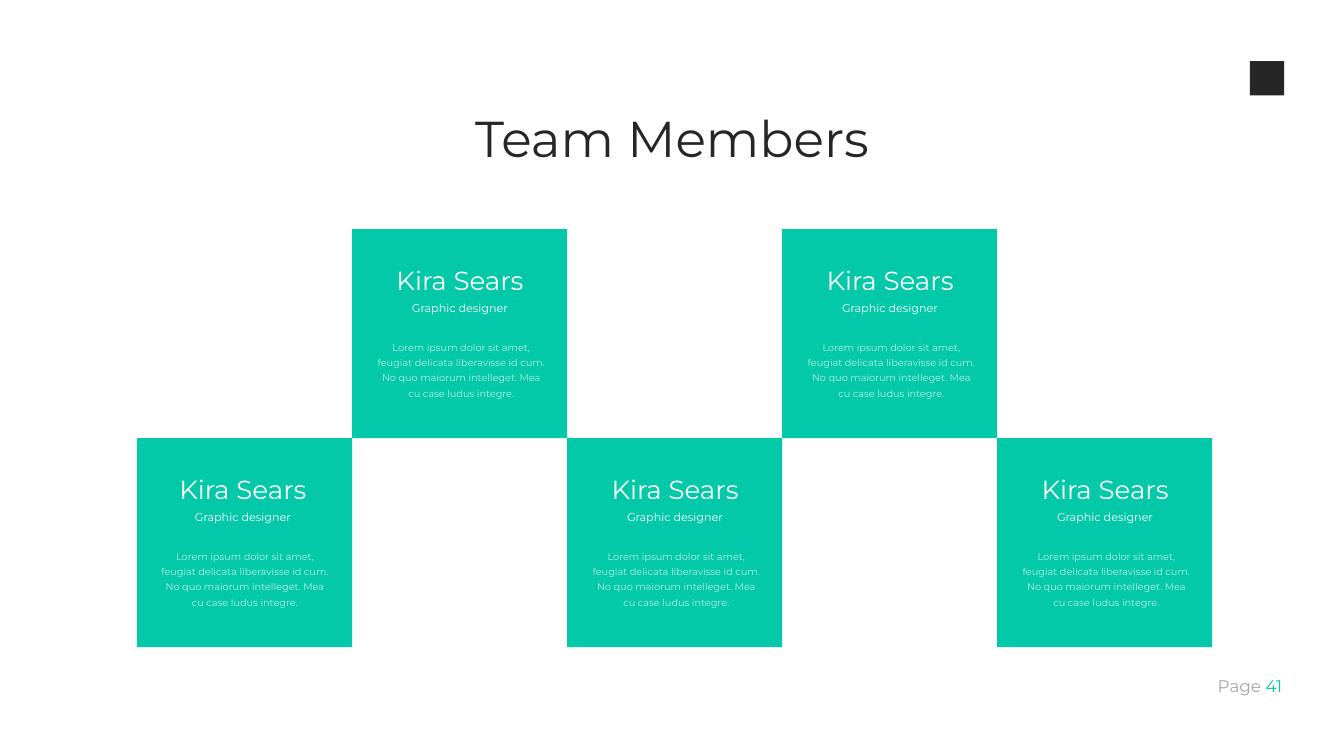
from lxml.etree import SubElement
from pptx import Presentation
from pptx.dml.color import RGBColor
from pptx.enum.shapes import MSO_SHAPE as Shape
from pptx.enum.text import MSO_AUTO_SIZE as AutoSize, PP_ALIGN as Align
from pptx.oxml.ns import qn
from pptx.util import Pt

PX = 9144
THEME = {
    "font": "Montserrat",
    "teal": "03C9A9", "dark": "262626", "gray": "A6A6A6", "white": "FFFFFF",
    "title": 54, "name": 28, "page": 18, "role": 12, "body": 10.5,
}
BIO = ("Lorem ipsum dolor sit amet, feugiat delicata liberavisse id cum. "
       "No quo maiorum intelleget. Mea cu case ludus integre.")

presentation = Presentation()
presentation.slide_width = 2000 * PX
presentation.slide_height = 1125 * PX
slide = presentation.slides.add_slide(presentation.slide_layouts[6])


def add_rectangle(left, top, width, height, color):
    shape = slide.shapes.add_shape(
        Shape.RECTANGLE, left * PX, top * PX, width * PX, height * PX)
    shape.shadow.inherit = False
    shape.fill.solid()
    shape.fill.fore_color.rgb = RGBColor.from_string(THEME[color])
    shape.line.fill.background()


def add_text(left, top, width, height, paragraphs, align=Align.CENTER):
    frame = slide.shapes.add_textbox(
        left * PX, top * PX, width * PX, height * PX).text_frame
    frame.word_wrap = True
    frame.auto_size = AutoSize.SHAPE_TO_FIT_TEXT
    for index, (before, spacing, runs) in enumerate(paragraphs):
        paragraph = frame.add_paragraph() if index else frame.paragraphs[0]
        paragraph.alignment = align
        paragraph.space_before = Pt(before)
        paragraph.line_spacing = spacing
        for text, size, color, opacity in runs:
            run = paragraph.add_run()
            run.text = text
            run.font.name = THEME["font"]
            run.font.size = Pt(THEME[size])
            run.font.color.rgb = RGBColor.from_string(THEME[color])
            if opacity < 100:
                color_element = run.font.fill._xPr.find(".//" + qn("a:srgbClr"))
                SubElement(color_element, qn("a:alpha"), val=str(opacity * 1000))


add_text(1742, 1001, 176, 40, [
    (0, 1.0, [("Page ", "page", "gray", 100), ("41", "page", "teal", 100)]),
], Align.RIGHT)
add_rectangle(1860, 91, 51, 51, "dark")
add_text(525, 154, 950, 101, [
    (6, 1.0, [("Team Members", "title", "dark", 100)]),
])

CARD_WIDTH, CARD_HEIGHT = 320, 311
FIRST_LEFT, UPPER_TOP = 204, 341
members = [("Kira Sears", "Graphic designer", BIO)] * 5
name_insets = [8, 11, 11, 11, 11]
bio_insets = [22, 24, 24, 24, 24]

for column, (name, role, bio) in enumerate(members):
    left = FIRST_LEFT + column * CARD_WIDTH
    top = UPPER_TOP + (column + 1) % 2 * CARD_HEIGHT
    add_rectangle(left, top, CARD_WIDTH, CARD_HEIGHT, "teal")
    add_text(left + name_insets[column], top + 47, 299, 86, [
        (0, 1.0, [(name, "name", "white", 100)]),
        (6, 1.0, [(role, "role", "white", 100)]),
    ])
    add_text(left + bio_insets[column], top + 157, 277, 102, [
        (12, 1.3, [(bio, "body", "white", 70)]),
    ])

presentation.save("out.pptx")
